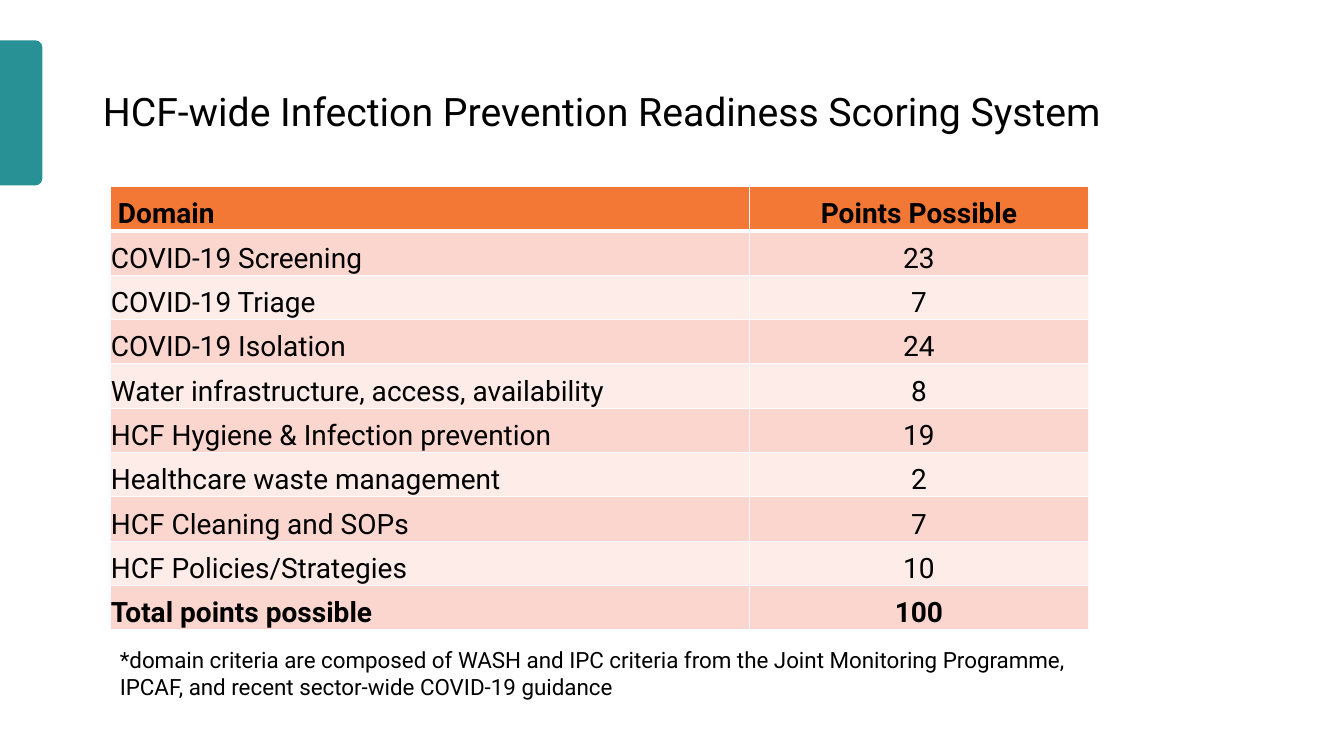
from lxml.etree import SubElement
from pptx import Presentation
from pptx.dml.color import RGBColor
from pptx.enum.shapes import MSO_SHAPE
from pptx.enum.text import MSO_ANCHOR, PP_ALIGN
from pptx.oxml import parse_xml
from pptx.oxml.ns import nsdecls, qn
from pptx.util import Inches, Pt

FONT = "Roboto"
BLACK = RGBColor(0x00, 0x00, 0x00)
TEAL = RGBColor(0x28, 0x91, 0x95)
ORANGE = RGBColor(0xF3, 0x78, 0x36)
PEACH = RGBColor(0xFA, 0xD6, 0xCE)
PALE_PEACH = RGBColor(0xFD, 0xEC, 0xE8)
BORDER = RGBColor(0xFA, 0xFB, 0xFF)

TITLE = "HCF-wide Infection Prevention Readiness Scoring System"
FOOTNOTE = ("*domain criteria are composed of WASH and IPC criteria from the "
            "Joint Monitoring Programme, IPCAF, and recent sector-wide "
            "COVID-19 guidance")
SCORES = [
    ("Domain", "Points Possible"),
    ("COVID-19 Screening", "23"),
    ("COVID-19 Triage", "7"),
    ("COVID-19 Isolation", "24"),
    ("Water infrastructure, access, availability", "8"),
    ("HCF Hygiene & Infection prevention", "19"),
    ("Healthcare waste management", "2"),
    ("HCF Cleaning and SOPs", "7"),
    ("HCF Policies/Strategies", "10"),
    ("Total points possible", "100"),
]
COL_WIDTHS = (6.34, 3.37)
ROW_HEIGHT = 0.44


def write(tf, text, size, bold=False, align=PP_ALIGN.LEFT):
    tf.text = text
    tf.word_wrap = True
    p = tf.paragraphs[0]
    p.alignment = align
    font = p.runs[0].font
    font.name, font.size, font.bold = FONT, Pt(size), bold
    font.color.rgb = BLACK
    return p


def add_side_tab(s):
    tab = s.shapes.add_shape(MSO_SHAPE.ROUND_2_SAME_RECTANGLE, Inches(-0.51),
                             Inches(0.91), Inches(1.44), Inches(0.42))
    tab.rotation = 90
    tab.shadow.inherit = False
    tab.fill.solid()
    tab.fill.fore_color.rgb = TEAL
    tab.line.fill.background()


def set_title(s):
    title = s.shapes.title
    title.left, title.top = Inches(0.92), Inches(0.4)
    title.width, title.height = Inches(11.43), Inches(1.45)
    p = write(title.text_frame, TITLE, 28)
    p.line_spacing = 0.9
    title.text_frame.vertical_anchor = MSO_ANCHOR.MIDDLE


def set_borders(cell, top, bottom):
    tcPr = cell._tc.get_or_add_tcPr()
    sides = (("lnL", 1), ("lnR", 1), ("lnT", top), ("lnB", bottom))
    for i, (tag, width) in enumerate(sides):
        ln = parse_xml(f'<a:{tag} {nsdecls("a")} w="{Pt(width)}"/>')
        fill = SubElement(ln, qn("a:solidFill"))
        SubElement(fill, qn("a:srgbClr"), val=str(BORDER))
        tcPr.insert(i, ln)


def format_cell(cell, text, row, col):
    header, total = row == 0, row == len(SCORES) - 1
    align = PP_ALIGN.CENTER if col else PP_ALIGN.LEFT
    p = write(cell.text_frame, text, 20, header or total, align)
    if header and col == 0:
        p._p.get_or_add_pPr().set("indent", str(Inches(0.07)))
    cell.vertical_anchor = MSO_ANCHOR.BOTTOM
    cell.margin_left = cell.margin_right = cell.margin_top = Inches(0.01)
    cell.margin_bottom = 0
    cell.fill.solid()
    band = PEACH if row % 2 else PALE_PEACH
    cell.fill.fore_color.rgb = ORANGE if header else band
    set_borders(cell, 3 if row == 1 else 1, 3 if header else 1)


def add_score_table(s):
    table = s.shapes.add_table(
        len(SCORES), len(COL_WIDTHS), Inches(1.09), Inches(1.85),
        Inches(sum(COL_WIDTHS)), Inches(ROW_HEIGHT * len(SCORES))).table
    for column, width in zip(table.columns, COL_WIDTHS):
        column.width = Inches(width)
    for i, texts in enumerate(SCORES):
        table.rows[i].height = Inches(ROW_HEIGHT)
        for j, text in enumerate(texts):
            format_cell(table.cell(i, j), text, i, j)


def add_footnote(s):
    box = s.shapes.add_textbox(Inches(1.09), Inches(6.36),
                               Inches(9.97), Inches(0.64))
    write(box.text_frame, FOOTNOTE, 16)


def main():
    prs = Presentation()
    prs.slide_width, prs.slide_height = Inches(13.33), Inches(7.5)
    s = prs.slides.add_slide(prs.slide_layouts[5])

    # Side tab and title
    add_side_tab(s)
    set_title(s)

    # Scores and footnote
    add_score_table(s)
    add_footnote(s)

    prs.save("out.pptx")


if __name__ == "__main__":
    main()
